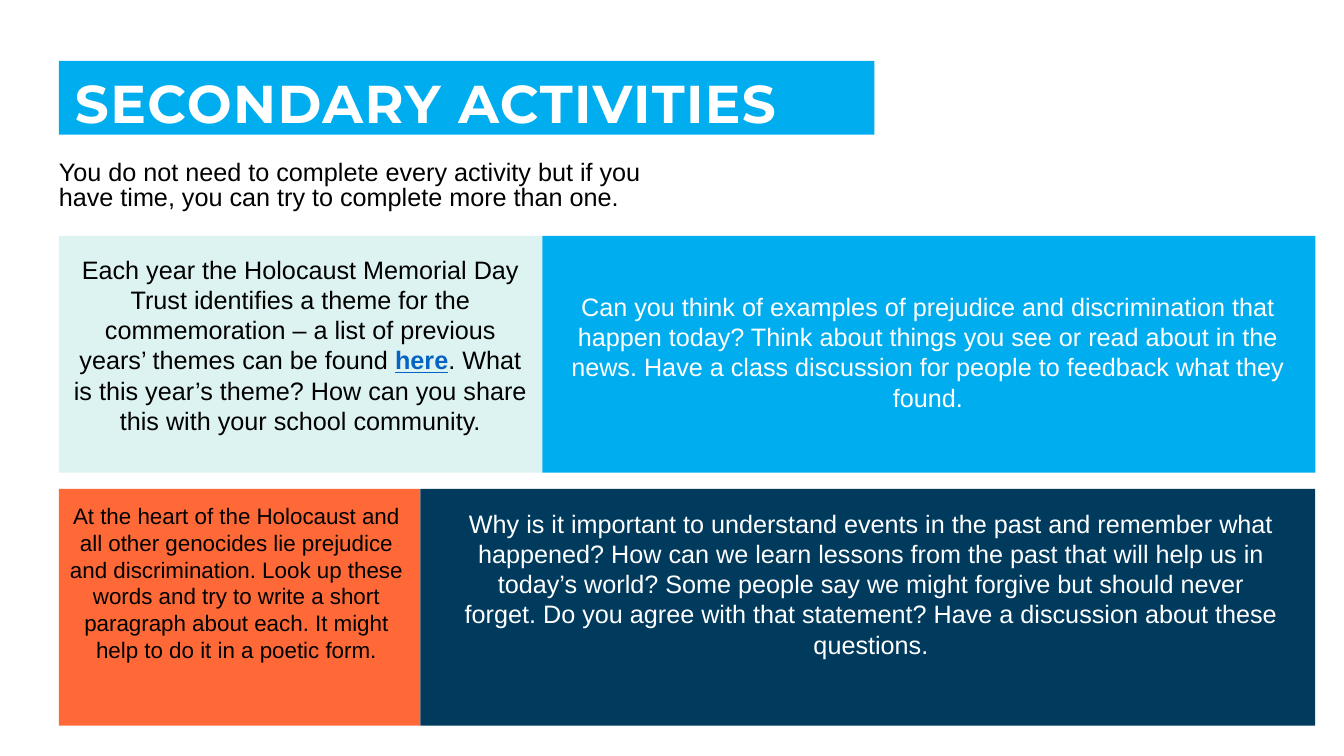
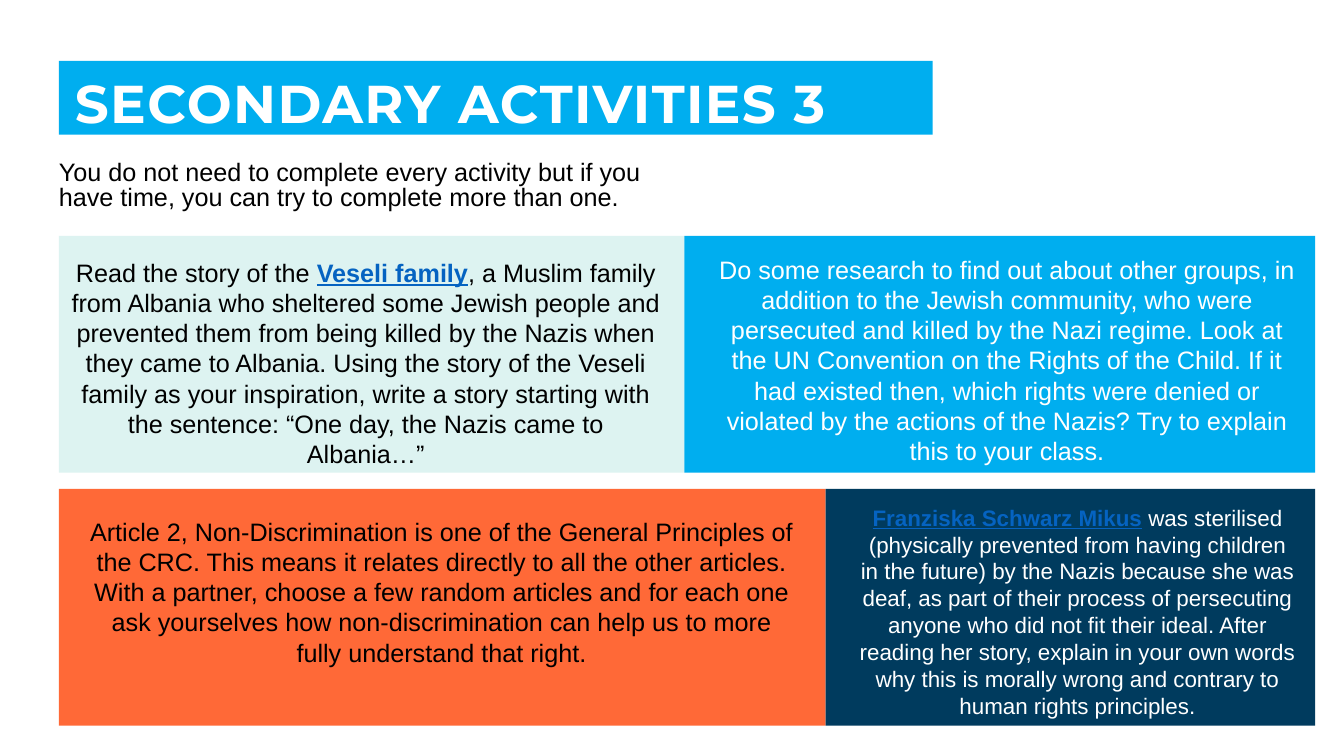
from dataclasses import dataclass

from pptx import Presentation
from pptx.dml.color import RGBColor
from pptx.enum import shapes, text
from pptx.util import Pt


@dataclass(frozen=True)
class Theme:
    sky: str = "00AEEF"
    mint: str = "DDF3F1"
    orange: str = "FF6937"
    navy: str = "003B5E"
    link: str = "0563C1"
    black: str = "000000"
    white: str = "FFFFFF"
    body_font: str = "Arial"
    title_font: str = "Montserrat"
    title_size: float = 38
    body_size: float = 18
    small_size: float = 16


T = Theme()
LEFT, RIGHT = 42, 939.5
ROW_TOPS = (168.5, 349.2)
ROW_HEIGHT = 169.2
FILLS = ((T.mint, T.sky), (T.orange, T.navy))
INKS = ((T.black, T.white), (T.black, T.white))
INTRO = ("You do not need to complete every activity but if you have time, "
         "you can try to complete more than one.")


def write(sp, parts, *, size=T.body_size, font=T.body_font, color=T.black,
          bold=False, align=text.PP_ALIGN.LEFT, anchor=text.MSO_ANCHOR.TOP,
          line=1.0, insets=(7.2, 3.6, 7.2, 3.6), tracking=0, grow=False):
    """Fill a shape with one paragraph; every second part is styled as a link."""
    tf = sp.text_frame
    tf.word_wrap = True
    tf.auto_size = (text.MSO_AUTO_SIZE.SHAPE_TO_FIT_TEXT if grow
                    else text.MSO_AUTO_SIZE.NONE)
    tf.vertical_anchor = anchor
    tf.margin_left, tf.margin_top, tf.margin_right, tf.margin_bottom = map(Pt, insets)
    p = tf.paragraphs[0]
    p.alignment = align
    p.line_spacing = line
    for i, part in enumerate(parts):
        is_link = i % 2 == 1
        if not part:
            continue
        r = p.add_run()
        r.text = part
        f = r.font
        f.name, f.size = font, Pt(size)
        f.bold = bold or is_link
        f.underline = is_link
        f.color.rgb = RGBColor.from_string(T.link if is_link else color)
        if tracking:
            r._r.get_or_add_rPr().set("spc", str(round(tracking * 100)))


class Deck:
    def __init__(self):
        self.prs = Presentation()
        self.prs.slide_width, self.prs.slide_height = Pt(960), Pt(540)
        self.s = None

    def rect(self, x, y, w, h, fill):
        sp = self.s.shapes.add_shape(shapes.MSO_SHAPE.RECTANGLE,
                                     Pt(x), Pt(y), Pt(w), Pt(h))
        sp.shadow.inherit = False
        sp.fill.solid()
        sp.fill.fore_color.rgb = RGBColor.from_string(fill)
        sp.line.fill.background()
        return sp

    def textbox(self, x, y, w, h, parts, **fmt):
        sp = self.s.shapes.add_textbox(Pt(x), Pt(y), Pt(w), Pt(h))
        write(sp, parts, **fmt)

    def title(self, words, width):
        sp = self.rect(LEFT, 43.4, width, 52.8, T.sky)
        write(sp, [words], size=T.title_size, font=T.title_font, color=T.white,
              bold=True, anchor=text.MSO_ANCHOR.MIDDLE, line=0.9,
              insets=(11.5, 11.5, 8.6, 0), tracking=1)

    def intro(self):
        self.textbox(LEFT, 112.5, 447, 44.6, [INTRO], line=0.8,
                     insets=(0, 3.6, 7.2, 3.6))

    def row(self, top, split, fills, inks, cards):
        """Two panels that meet at split, each with its own text."""
        edges = (LEFT, split, RIGHT)
        for x, end, fill in zip(edges, edges[1:], fills):
            self.rect(x, top, end - x, ROW_HEIGHT, fill)
        for ink, (box, size, parts) in zip(inks, cards):
            self.textbox(*box, parts, size=size, color=ink,
                         align=text.PP_ALIGN.CENTER, grow=True)

    def activities(self, title, title_width, rows):
        self.s = self.prs.slides.add_slide(self.prs.slide_layouts[6])
        self.title(title, title_width)
        self.intro()
        for top, fills, inks, (split, cards) in zip(ROW_TOPS, FILLS, INKS, rows):
            self.row(top, split, fills, inks, cards)


# Each row: where its panels meet, then (box, type size, text parts) per panel.
SLIDES = [
    ("SECONDARY ACTIVITIES", 582.5, [
        (387.4, [
            ((42, 177.8, 345, 138.2), T.body_size, [
                "Each year the Holocaust Memorial Day Trust identifies a theme for "
                "the commemoration – a list of previous years’ themes can be found ",
                "here",
                ". What is this year’s theme? How can you share this with your "
                "school community."]),
            ((401, 204.5, 523.5, 94.3), T.body_size, [
                "Can you think of examples of prejudice and discrimination that "
                "happen today? Think about things you see or read about in the "
                "news. Have a class discussion for people to feedback what they "
                "found."]),
        ]),
        (300.3, [
            ((39.6, 355, 258.5, 123.8), T.small_size, [
                "At the heart of the Holocaust and all other genocides lie "
                "prejudice and discrimination. Look up these words and try to "
                "write a short paragraph about each. It might help to do it in a "
                "poetic form."]),
            ((324, 359.3, 596.2, 116.6), T.body_size, [
                "Why is it important to understand events in the past and remember "
                "what happened? How can we learn lessons from the past that will "
                "help us in today’s world? Some people say we might forgive but "
                "should never forget. Do you agree with that statement? Have a "
                "discussion about these questions."]),
        ]),
    ]),
    ("SECONDARY ACTIVITIES 3", 624.2, [
        (488.9, [
            ((42, 180, 438.5, 159.8), T.body_size, [
                "Read the story of the ",
                "Veseli family",
                ", a Muslim family from Albania who sheltered some Jewish people "
                "and prevented them from being killed by the Nazis when they came "
                "to Albania. Using the story of the Veseli family as your "
                "inspiration, write a story starting with the sentence: “One day, "
                "the Nazis came to Albania…”"]),
            ((504.7, 177.8, 429.1, 159.8), T.body_size, [
                "Do some research to find out about other groups, in addition to "
                "the Jewish community, who were persecuted and killed by the Nazi "
                "regime. Look at the UN Convention on the Rights of the Child. If "
                "it had existed then, which rights were denied or violated by the "
                "actions of the Nazis? Try to explain this to your class."]),
        ]),
        (589.7, [
            ((56.9, 365, 517, 116.6), T.body_size, [
                "Article 2, Non-Discrimination is one of the General Principles of "
                "the CRC. This means it relates directly to all the other articles. "
                "With a partner, choose a few random articles and for each one ask "
                "yourselves how non-discrimination can help us to more fully "
                "understand that right."]),
            ((605.5, 356.4, 328.3, 162.7), T.small_size, [
                "",
                "Franziska Schwarz Mikus",
                " was sterilised (physically prevented from having children in the "
                "future) by the Nazis because she was deaf, as part of their "
                "process of persecuting anyone who did not fit their ideal. After "
                "reading her story, explain in your own words why this is morally "
                "wrong and contrary to human rights principles."]),
        ]),
    ]),
]


def main():
    deck = Deck()
    for slide in SLIDES:
        deck.activities(*slide)
    deck.prs.save("out.pptx")


if __name__ == "__main__":
    main()
